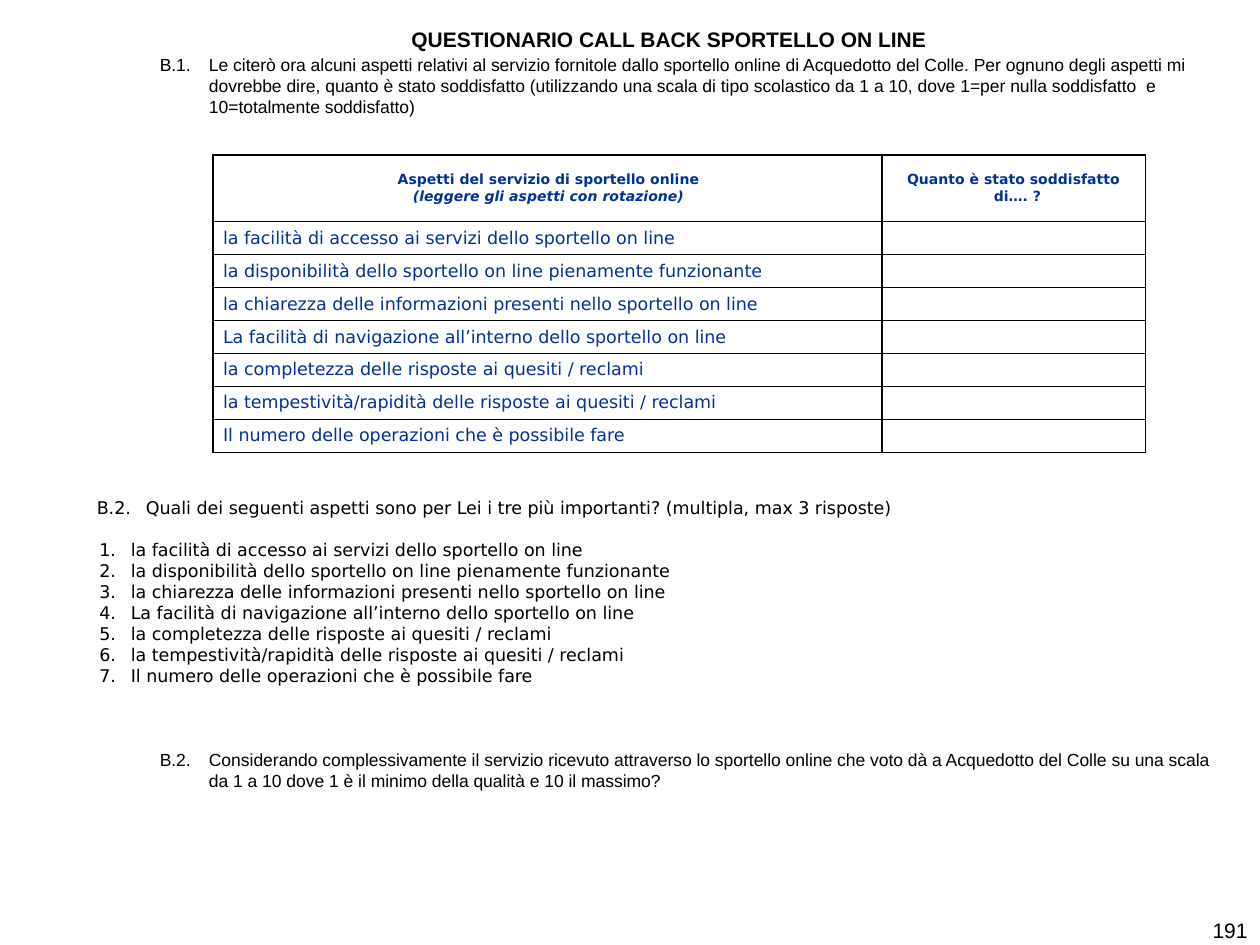
from lxml import etree
from pptx import Presentation
from pptx.dml.color import RGBColor
from pptx.enum.text import MSO_ANCHOR, MSO_AUTO_SIZE, PP_ALIGN
from pptx.oxml.ns import qn
from pptx.util import Inches, Pt

BLACK = RGBColor(0x00, 0x00, 0x00)
BLUE = RGBColor(0x00, 0x33, 0x99)
SANS, TABLE_FONT = "Arial", "DejaVu Sans"
LEFT, CENTER, RIGHT = PP_ALIGN.LEFT, PP_ALIGN.CENTER, PP_ALIGN.RIGHT
TOP, MIDDLE = MSO_ANCHOR.TOP, MSO_ANCHOR.MIDDLE
TITLE_ONLY = 5

TITLE = "QUESTIONARIO CALL BACK SPORTELLO ON LINE"
RATING_QUESTION = (
    "B.1.\tLe citerò ora alcuni aspetti relativi al servizio fornitole dallo "
    "sportello online di Acquedotto del Colle. Per ognuno degli aspetti mi "
    "dovrebbe dire, quanto è stato soddisfatto (utilizzando una scala di tipo "
    "scolastico da 1 a 10, dove 1=per nulla soddisfatto  e "
    "10=totalmente soddisfatto)")
PRIORITY_QUESTION = ("B.2.\tQuali dei seguenti aspetti sono per Lei i tre più "
                     "importanti? (multipla, max 3 risposte)")
OVERALL_QUESTION = (
    "B.2.\tConsiderando complessivamente il servizio ricevuto attraverso lo "
    "sportello online che voto dà a Acquedotto del Colle su una scala da 1 a 10 "
    "dove 1 è il minimo della qualità e 10 il massimo?")
ASPECTS = [
    "la facilità di accesso ai servizi dello sportello on line",
    "la disponibilità dello sportello on line pienamente funzionante",
    "la chiarezza delle informazioni presenti nello sportello on line",
    "La facilità di navigazione all’interno dello sportello on line",
    "la completezza delle risposte ai quesiti / reclami",
    "la tempestività/rapidità delle risposte ai quesiti / reclami",
    "Il numero delle operazioni che è possibile fare",
]

TABLE_WIDTH, TABLE_HEIGHT = 7.4, 2.36
COLUMN_WIDTHS = (5.31, TABLE_WIDTH - 5.31)
HEADER_HEIGHT = 0.53
ROW_HEIGHT = (TABLE_HEIGHT - HEADER_HEIGHT) / len(ASPECTS)


def add_run(paragraph, text, size, font=SANS, color=BLACK, bold=False, italic=False):
    run = paragraph.add_run()
    run.text = text
    run.font.size = Pt(size)
    run.font.name = font
    run.font.color.rgb = color
    run.font.bold = bold
    run.font.italic = italic


def set_indent(paragraph, margin, first_line):
    properties = paragraph._p.get_or_add_pPr()
    properties.set("marL", str(Inches(margin)))
    properties.set("indent", str(Inches(first_line)))
    return properties


def prepare_frame(shape, anchor):
    frame = shape.text_frame
    frame.word_wrap = True
    frame.auto_size = MSO_AUTO_SIZE.NONE
    frame.vertical_anchor = anchor
    return frame


def add_text_box(slide, left, top, width, height):
    box = slide.shapes.add_textbox(*map(Inches, (left, top, width, height)))
    return prepare_frame(box, MIDDLE)


def format_title(slide):
    title = slide.shapes.title
    title.left, title.top, title.width, title.height = map(
        Inches, (0.78, 0.16, 9.06, 0.3))
    paragraph = prepare_frame(title, TOP).paragraphs[0]
    paragraph.alignment = CENTER
    add_run(paragraph, TITLE, 12, bold=True)


def add_line(paragraph, text, font, margin, hanging, space_before=0, numbered=False):
    paragraph.alignment = LEFT
    paragraph.line_spacing = Pt(12)
    paragraph.space_before = Pt(space_before)
    properties = set_indent(paragraph, margin, -hanging)
    if numbered:
        etree.SubElement(properties, qn("a:buFont"), typeface="+mj-lt")
        etree.SubElement(properties, qn("a:buAutoNum"), type="arabicPeriod")
    add_run(paragraph, text, 10, font)


def add_questions(slide):
    frame = add_text_box(slide, 0.67, 0.36, 9.14, 5.99)
    add_line(frame.paragraphs[0], RATING_QUESTION, SANS, 0.89, 0.39)
    add_line(frame.add_paragraph(), PRIORITY_QUESTION, TABLE_FONT, 0.39, 0.39, 217)
    for index, aspect in enumerate(ASPECTS):
        add_line(frame.add_paragraph(), aspect, TABLE_FONT, 0.27, 0.25,
                 0 if index else 12, numbered=True)
    add_line(frame.add_paragraph(), OVERALL_QUESTION, SANS, 0.89, 0.39, 36)


def format_cell(cell):
    """Set a plain cell with thin black borders and tight margins."""
    cell.vertical_anchor = MIDDLE
    cell.margin_left = cell.margin_right = Inches(0.06)
    cell.margin_top = cell.margin_bottom = 0
    cell.fill.background()
    properties = cell._tc.get_or_add_tcPr()
    for position, side in enumerate(("a:lnL", "a:lnR", "a:lnT", "a:lnB")):
        line = etree.Element(qn(side), w=str(Pt(1)))
        fill = etree.SubElement(line, qn("a:solidFill"))
        etree.SubElement(fill, qn("a:srgbClr"), val=str(BLACK))
        properties.insert(position, line)


def write_cell(paragraph, text, size, alignment=LEFT, margin=0.02, first_line=0,
               **style):
    paragraph.alignment = alignment
    set_indent(paragraph, margin, first_line)
    add_run(paragraph, text, size, TABLE_FONT, BLUE, **style)


def add_aspect_table(slide):
    frame = slide.shapes.add_table(
        len(ASPECTS) + 1, 2,
        *map(Inches, (1.69, 1.23, TABLE_WIDTH, TABLE_HEIGHT)))
    table = frame.table
    table.first_row = table.horz_banding = False
    for column, width in zip(table.columns, COLUMN_WIDTHS):
        column.width = Inches(width)
    for index, row in enumerate(table.rows):
        row.height = Inches(ROW_HEIGHT if index else HEADER_HEIGHT)
    for cell in table.iter_cells():
        format_cell(cell)

    heading = table.cell(0, 0).text_frame
    write_cell(heading.paragraphs[0], "Aspetti del servizio di sportello online",
               8, CENTER, bold=True)
    write_cell(heading.add_paragraph(), "(leggere gli aspetti con rotazione)",
               8, CENTER, bold=True, italic=True)
    write_cell(table.cell(0, 1).text_frame.paragraphs[0],
               "Quanto è stato soddisfatto di…. ?", 8, CENTER, 0.06, -0.06, bold=True)
    for index, aspect in enumerate(ASPECTS, start=1):
        write_cell(table.cell(index, 0).text_frame.paragraphs[0], aspect, 10)
        answer = table.cell(index, 1).text_frame.paragraphs[0]
        etree.SubElement(answer._p, qn("a:endParaRPr"), sz="1000")


def add_page_number(slide):
    paragraph = add_text_box(slide, 8.62, 7.27, 1.38, 0.23).paragraphs[0]
    paragraph.alignment = RIGHT
    add_run(paragraph, "191", 12)


def main():
    presentation = Presentation()
    presentation.slide_width, presentation.slide_height = Inches(10), Inches(7.5)
    slide = presentation.slides.add_slide(presentation.slide_layouts[TITLE_ONLY])
    add_page_number(slide)
    add_questions(slide)
    format_title(slide)
    add_aspect_table(slide)
    presentation.save("out.pptx")


if __name__ == "__main__":
    main()
